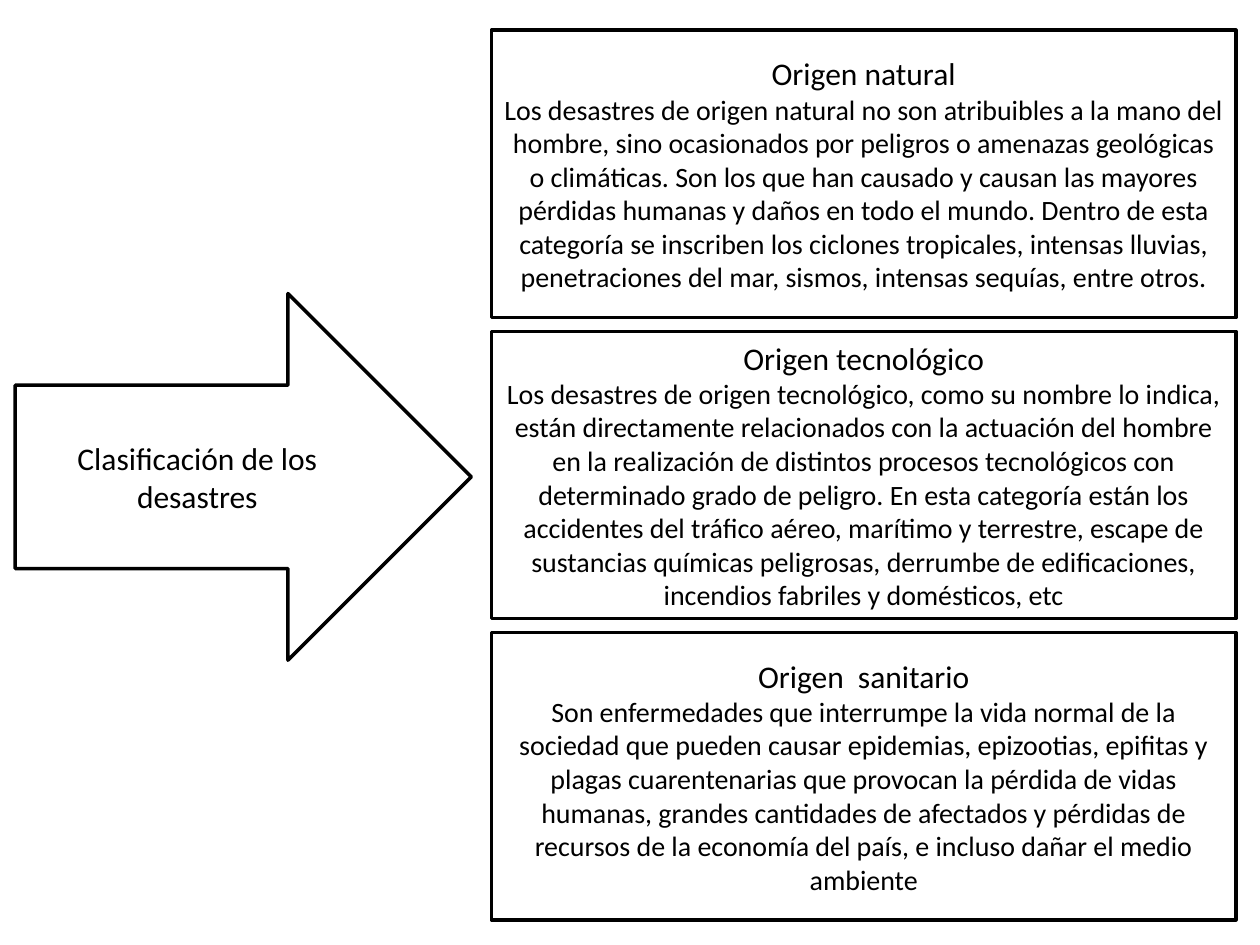
from pptx import Presentation
from pptx.util import Inches, Pt
from pptx.dml.color import RGBColor
from pptx.enum.shapes import MSO_SHAPE
from pptx.enum.text import MSO_ANCHOR, PP_ALIGN

ARROW, RECT = MSO_SHAPE.RIGHT_ARROW, MSO_SHAPE.RECTANGLE
MIDDLE, CENTER = MSO_ANCHOR.MIDDLE, PP_ALIGN.CENTER
COLORS = {"ink": "000000", "paper": "FFFFFF"}

deck = Presentation()
deck.slide_width, deck.slide_height = Inches(10), Inches(7.5)
slide = deck.slides.add_slide(deck.slide_layouts[6])


def write(par, text, size=18, font="Calibri", color="ink", align=CENTER):
    par.alignment = align
    run = par.add_run()
    run.text = text
    run.font.size = Pt(size)
    run.font.name = font
    run.font.color.rgb = RGBColor.from_string(COLORS[color])


def draw(kind, left, top, width, height):
    shape = slide.shapes.add_shape(kind, *map(Inches, (left, top, width, height)))
    shape.shadow.inherit = False
    shape.fill.solid()
    shape.fill.fore_color.rgb = RGBColor.from_string(COLORS["paper"])
    shape.line.color.rgb = RGBColor.from_string(COLORS["ink"])
    shape.line.width = Pt(2)
    frame = shape.text_frame
    frame.word_wrap = True
    frame.vertical_anchor = MIDDLE
    return frame


arrow = draw(ARROW, 0.12, 2.33, 3.62, 2.91)
write(arrow.paragraphs[0], "Clasificación de los desastres")

origins = [
    ("Origen natural",
     "Los desastres de origen natural no son atribuibles a la mano del hombre, "
     "sino ocasionados por peligros o amenazas geológicas o climáticas. Son los "
     "que han causado y causan las mayores pérdidas humanas y daños en todo el "
     "mundo. Dentro de esta categoría se inscriben los ciclones tropicales, "
     "intensas lluvias, penetraciones del mar, sismos, intensas sequías, entre "
     "otros."),
    ("Origen tecnológico",
     "Los desastres de origen tecnológico, como su nombre lo indica, están "
     "directamente relacionados con la actuación del hombre en la realización "
     "de distintos procesos tecnológicos con determinado grado de peligro. En "
     "esta categoría están los accidentes del tráfico aéreo, marítimo y "
     "terrestre, escape de sustancias químicas peligrosas, derrumbe de "
     "edificaciones, incendios fabriles y domésticos, etc"),
    ("Origen  sanitario",
     "Son enfermedades que interrumpe la vida normal de la sociedad que pueden "
     "causar epidemias, epizootias, epifitas y plagas cuarentenarias que "
     "provocan la pérdida de vidas humanas, grandes cantidades de afectados y "
     "pérdidas de recursos de la economía del país, e incluso dañar el medio "
     "ambiente"),
]
first, pitch = 0.24, 2.39
for row, (title, body) in enumerate(origins):
    box = draw(RECT, 3.9, first + row * pitch, 5.91, 2.28)
    write(box.paragraphs[0], title)
    write(box.add_paragraph(), body, size=16)

deck.save("out.pptx")
